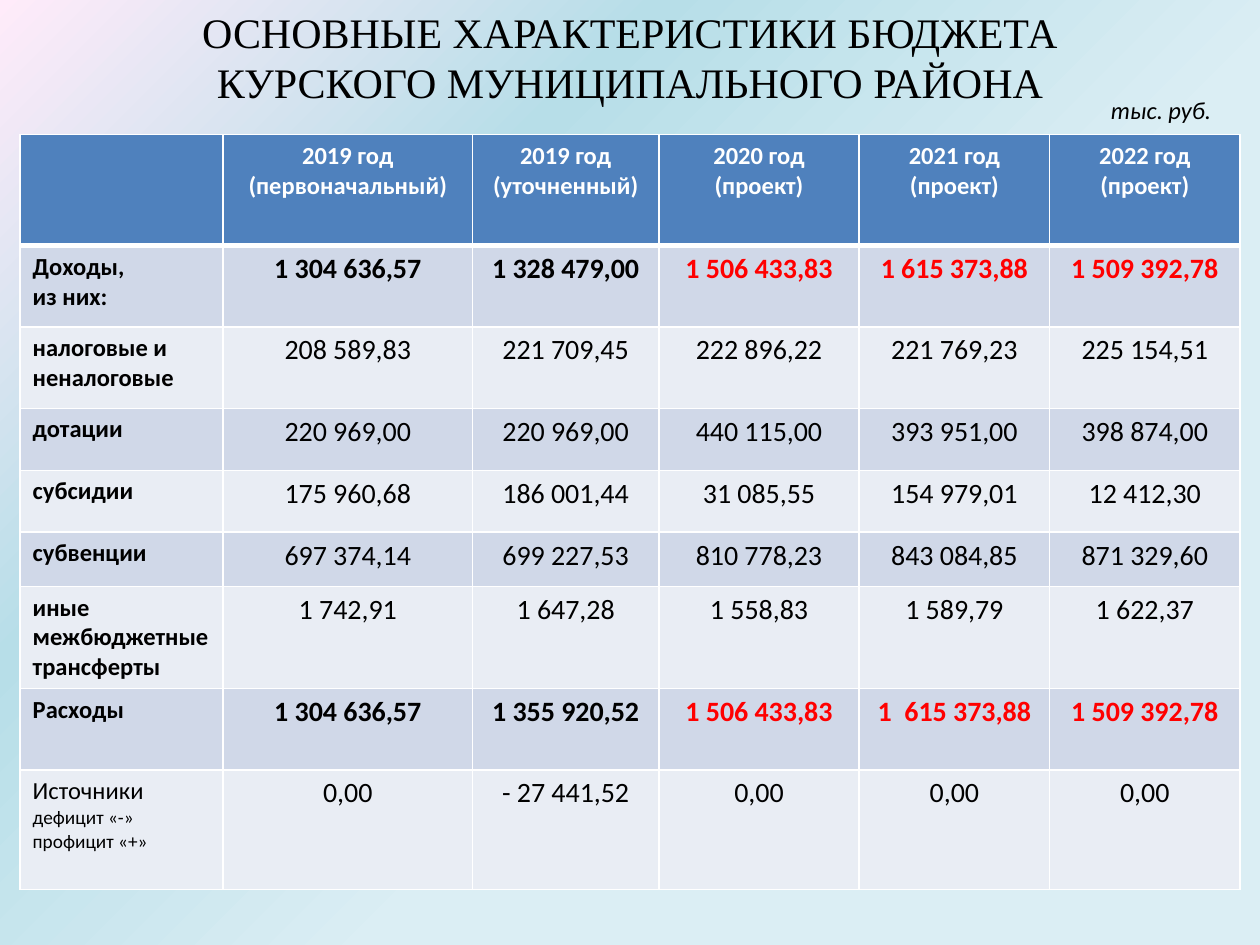
from pptx import Presentation
from pptx.dml.color import RGBColor
from pptx.enum.text import MSO_AUTO_SIZE as AutoSize, PP_ALIGN as Align
from pptx.oxml import parse_xml
from pptx.oxml.ns import nsdecls
from pptx.util import Pt

# Content
TITLE = "ОСНОВНЫЕ ХАРАКТЕРИСТИКИ БЮДЖЕТА КУРСКОГО МУНИЦИПАЛЬНОГО РАЙОНА"
UNIT = "тыс. руб."
ROWS = [
    ["", "2019 год (первоначальный)", "2019 год (уточненный)",
     "2020 год\n(проект)", "2021 год (проект)", "2022 год (проект)"],
    ["Доходы,\nиз них:", "1 304 636,57", "1 328 479,00",
     "1 506 433,83", "1 615 373,88", "1 509 392,78"],
    ["налоговые и неналоговые", "208 589,83", "221 709,45",
     "222 896,22", "221 769,23", "225 154,51"],
    ["дотации", "220 969,00", "220 969,00", "440 115,00", "393 951,00", "398 874,00"],
    ["субсидии", "175 960,68", "186 001,44", "31 085,55", "154 979,01", "12 412,30"],
    ["субвенции", "697 374,14", "699 227,53", "810 778,23", "843 084,85", "871 329,60"],
    ["иные межбюджетные трансферты", "1 742,91", "1 647,28",
     "1 558,83", "1 589,79", "1 622,37"],
    ["Расходы", "1 304 636,57", "1 355 920,52",
     "1 506 433,83", "1  615 373,88", "1 509 392,78"],
    ["Источники ", "0,00", "- 27 441,52", "0,00", "0,00", "0,00"],
]
SOURCE_NOTES = ("дефицит «-»", "профицит «+»")
TOTAL_ROWS = (1, 7)
FIRST_PROJECT_COLUMN = 3
LAST_ROW = len(ROWS) - 1

COLUMN_WIDTHS = [116, 142.5, 106.5, 114.5, 108.8, 108.8]
ROW_HEIGHTS = [63.4, 46.5, 46.5, 35.4, 35.4, 31, 57.6, 46.5, 68.4]

COLORS = {
    "header": "4F81BD", "band": "D0D8E8", "light": "E9EDF4",
    "white": "FFFFFF", "text": "000000", "project": "FF0000",
}
BACKGROUND_STOPS = [(0, "DBEEF4"), (40, "DBEEF4"), (70, "B7DEE8"), (100, "FFEBFA")]


def format_span(span, size, color="text", bold=False, italic=False, name="Calibri"):
    font = span.font
    font.name, font.size, font.bold, font.italic = name, Pt(size), bold, italic
    font.color.rgb = RGBColor.from_string(COLORS[color])


def add_caption(page, text, left, top, width, height, size, **style):
    box = page.shapes.add_textbox(Pt(left), Pt(top), Pt(width), Pt(height))
    frame = box.text_frame
    frame.text = text
    frame.word_wrap = True
    frame.auto_size = AutoSize.SHAPE_TO_FIT_TEXT
    para = frame.paragraphs[0]
    para.alignment = Align.CENTER
    format_span(para.runs[0], size, **style)


def set_borders(cell, top, bottom):
    widths = {"L": 1, "R": 1, "T": top, "B": bottom}
    for index, (side, width) in enumerate(widths.items()):
        line = parse_xml(
            f'<a:ln{side} {nsdecls("a")} w="{Pt(width)}"><a:solidFill>'
            f'<a:srgbClr val="{COLORS["white"]}"/></a:solidFill></a:ln{side}>')
        cell._tc.get_or_add_tcPr().insert(index, line)


def cell_style(row, column):
    if row == 0:
        return {"size": 14, "color": "white", "bold": True}
    if column == 0:
        return {"size": 14, "bold": row != LAST_ROW}
    is_total = row in TOTAL_ROWS
    is_project = is_total and column >= FIRST_PROJECT_COLUMN
    return {"size": 16, "bold": is_total, "color": "project" if is_project else "text"}


def fill_cell(cell, row, column, text):
    fill = "header" if row == 0 else "band" if row % 2 else "light"
    cell.fill.solid()
    cell.fill.fore_color.rgb = RGBColor.from_string(COLORS[fill])
    set_borders(cell, top=3 if row == 1 else 1, bottom=3 if row == 0 else 1)
    cell.text_frame.text = text
    for para in cell.text_frame.paragraphs:
        para.alignment = Align.CENTER if row == 0 or column else Align.LEFT
        for span in para.runs:
            format_span(span, **cell_style(row, column))


def add_source_notes(cell):
    deficit, surplus = SOURCE_NOTES
    frame = cell.text_frame
    for para, note in ((frame.paragraphs[0], deficit), (frame.add_paragraph(), surplus)):
        span = para.add_run()
        span.text = note
        format_span(span, 11)


def add_budget_table(page):
    table = page.shapes.add_table(
        len(ROWS), len(COLUMN_WIDTHS), Pt(11.5), Pt(77),
        Pt(sum(COLUMN_WIDTHS)), Pt(sum(ROW_HEIGHTS))).table
    for column, width in zip(table.columns, COLUMN_WIDTHS):
        column.width = Pt(width)
    for row, height in zip(table.rows, ROW_HEIGHTS):
        row.height = Pt(height)
    for r, texts in enumerate(ROWS):
        for c, text in enumerate(texts):
            fill_cell(table.cell(r, c), r, c, text)
    add_source_notes(table.cell(LAST_ROW, 0))


def set_background(page):
    stops = "".join(
        f'<a:gs pos="{position * 1000}"><a:srgbClr val="{color}"/></a:gs>'
        for position, color in BACKGROUND_STOPS)
    gradient = parse_xml(
        f'<a:gradFill {nsdecls("a")} rotWithShape="1"><a:gsLst>{stops}</a:gsLst>'
        '<a:path path="circle"><a:fillToRect l="100000" t="100000"/></a:path>'
        '</a:gradFill>')
    page.background.fill.solid()
    properties = page._element.cSld.bg.bgPr
    properties.replace(properties[0], gradient)


def main():
    deck = Presentation()
    deck.slide_width, deck.slide_height = Pt(720), Pt(540)
    page = deck.slides.add_slide(deck.slide_layouts[6])
    set_background(page)
    add_budget_table(page)
    # Title and unit of measure
    add_caption(page, TITLE, 82, 0, 556, 65.5, 24, name="Times New Roman")
    add_caption(page, UNIT, 607, 50.5, 113, 24.5, 14, italic=True)
    deck.save("out.pptx")


if __name__ == "__main__":
    main()
